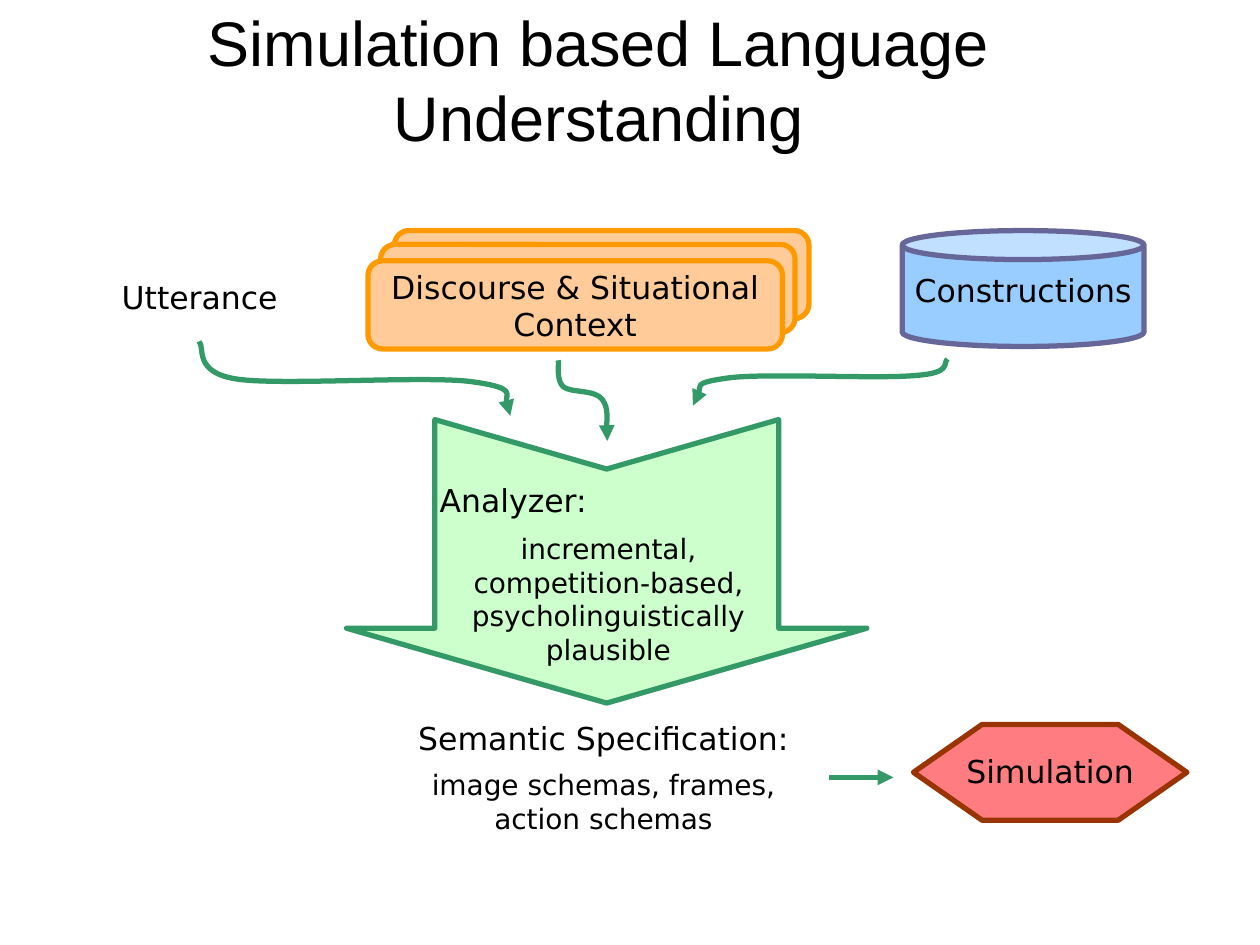
from lxml import etree
from pptx import Presentation
from pptx.dml.color import RGBColor
from pptx.enum.shapes import MSO_CONNECTOR, MSO_SHAPE
from pptx.enum.text import MSO_ANCHOR, PP_ALIGN
from pptx.oxml.ns import qn
from pptx.util import Inches, Pt

STRAIGHT = MSO_CONNECTOR.STRAIGHT
ROUNDED = MSO_SHAPE.ROUNDED_RECTANGLE
CAN = MSO_SHAPE.CAN
HEXAGON = MSO_SHAPE.HEXAGON
NOTCHED_ARROW = MSO_SHAPE.NOTCHED_RIGHT_ARROW
TOP, MIDDLE = MSO_ANCHOR.TOP, MSO_ANCHOR.MIDDLE
LEFT, CENTER = PP_ALIGN.LEFT, PP_ALIGN.CENTER

COLORS = {
    "text": "000000",
    "context": "FFCC99", "context_line": "FF9900",
    "store": "99CCFF", "store_line": "666699",
    "simulation": "FF7C80", "simulation_line": "993300",
    "analyzer": "CCFFCC", "flow": "339966",
}
BODY = "DejaVu Sans"
LABEL_INSETS = (0.09, 0.04, 0.09, 0)

FLOWS = [
    [(7.52, 2.85), (7.48, 2.88), (7.56, 2.96), (7.27, 2.98), (6.98, 3.01),
     (6.07, 2.96), (5.78, 3), (5.48, 3.04), (5.56, 3.18), (5.5, 3.22)],
    [(1.58, 2.71), (1.63, 2.76), (1.53, 2.96), (1.89, 3.01), (2.25, 3.06),
     (3.39, 2.98), (3.75, 3.03), (4.11, 3.08), (3.99, 3.24), (4.05, 3.3)],
    [(4.43, 2.86), (4.44, 2.89), (4.41, 3.01), (4.47, 3.07), (4.53, 3.12),
     (4.72, 3.09), (4.78, 3.17), (4.83, 3.24), (4.81, 3.43), (4.82, 3.5)],
]


def rgb(name):
    """Return the named colour."""
    return RGBColor.from_string(COLORS[name])


def write(sp, *lines, size=18, font=BODY, align=CENTER, anchor=TOP,
          insets=(0.1, 0.05, 0.1, 0.05), after=0):
    """Fill a shape with paragraphs; a line may be a (text, size) pair."""
    tf = sp.text_frame
    tf.word_wrap = True
    tf.vertical_anchor = anchor
    tf.margin_left, tf.margin_top, tf.margin_right, tf.margin_bottom = map(Inches, insets)
    for i, line in enumerate(lines):
        text, points = line if isinstance(line, tuple) else (line, size)
        p = tf.add_paragraph() if i else tf.paragraphs[0]
        p.text = text
        p.alignment = align
        p.space_after = Pt(after)
        for r in p.runs:
            r.font.name = font
            r.font.size = Pt(points)
            r.font.color.rgb = rgb("text")


def add_text(s, box, *lines, **fmt):
    """Add a text box."""
    write(s.shapes.add_textbox(*map(Inches, box)), *lines, **fmt)


def add_box(s, kind, box, fill, line, adjustments):
    """Add a filled preset shape with a thick outline."""
    sp = s.shapes.add_shape(kind, *map(Inches, box))
    for i, value in enumerate(adjustments):
        sp.adjustments[i] = value
    sp.shadow.inherit = False
    sp.fill.solid()
    sp.fill.fore_color.rgb = rgb(fill)
    sp.line.color.rgb = rgb(line)
    sp.line.width = Pt(3)
    return sp


def style_flow(sp):
    """Give a line the flow colour and an arrowhead."""
    sp.line.color.rgb = rgb("flow")
    sp.line.width = Pt(3)
    etree.SubElement(sp.line._get_or_add_ln(), qn("a:tailEnd"), type="triangle")


def add_curve(s, points):
    """Add an arrow of cubic curves through start, control and end points."""
    pts = [(Inches(x), Inches(y)) for x, y in points]
    builder = s.shapes.build_freeform(*pts[0])
    builder.add_line_segments(pts[1:], close=False)
    sp = builder.convert_to_shape()
    sp.shadow.inherit = False
    sp.fill.background()
    segments = list(sp.element.iter(qn("a:lnTo")))
    outline = segments[0].getparent()
    for i in range(0, len(segments), 3):
        curve = etree.SubElement(outline, qn("a:cubicBezTo"))
        for segment in segments[i:i + 3]:
            curve.append(segment[0])
            outline.remove(segment)
    style_flow(sp)


def add_arrow(s, x1, y1, x2, y2):
    """Add a straight arrow."""
    c = s.shapes.add_connector(STRAIGHT, *map(Inches, (x1, y1, x2, y2)))
    style_flow(c)
    etree.SubElement(c.element.spPr, qn("a:effectLst"))


def add_inputs(s):
    """Add the three sources that feed the analyzer."""
    can = add_box(s, CAN, (7.16, 1.83, 1.92, 0.92), "store", "store_line", [0.25])
    write(can, "Constructions", insets=(0, 0.09, 0, 0))
    add_text(s, (0.67, 2.17, 1.83, 0.44), "Utterance", insets=LABEL_INSETS)
    for x, y in ((3.13, 1.83), (3.02, 1.94), (2.92, 2.07)):
        card = add_box(s, ROUNDED, (x, y, 3.29, 0.7), "context", "context_line", [0.167])
    write(card, "Discourse & Situational Context", insets=(0, 0.02, 0, 0))


def add_analyzer(s):
    """Add the analyzer arrow, its text and the flows into it."""
    arrow = add_box(s, NOTCHED_ARROW, (3.69, 2.39, 2.25, 4.13),
                    "analyzer", "flow", [0.661, 0.264])
    arrow.rotation = 90
    for points in FLOWS:
        add_curve(s, points)
    add_text(s, (3.4, 3.78, 1.6, 0.4), "Analyzer:", align=LEFT, insets=LABEL_INSETS)
    add_text(s, (3.58, 4.17, 2.5, 1.17), "incremental,",
             "competition-based, psycholinguistically plausible", size=16)


def add_outputs(s):
    """Add the semantic specification and the simulation."""
    add_text(s, (2.92, 5.67, 3.74, 0.95), "Semantic Specification:",
             ("image schemas, frames,\vaction schemas", 16),
             insets=LABEL_INSETS, after=6)
    add_arrow(s, 6.58, 6.17, 7.09, 6.17)
    hexagon = add_box(s, HEXAGON, (7.25, 5.75, 2.17, 0.76),
                      "simulation", "simulation_line", [0.717, 1.155])
    write(hexagon, "Simulation", insets=(0, 0.09, 0, 0))


def main():
    """Build the slide and save it."""
    prs = Presentation()
    prs.slide_width, prs.slide_height = Inches(10), Inches(7.5)
    s = prs.slides.add_slide(prs.slide_layouts[6])
    add_text(s, (0, 0, 9.5, 1.25), "Simulation based Language Understanding",
             size=36, font="Arial", anchor=MIDDLE)
    add_inputs(s)
    add_analyzer(s)
    add_outputs(s)
    prs.save("out.pptx")


if __name__ == "__main__":
    main()
